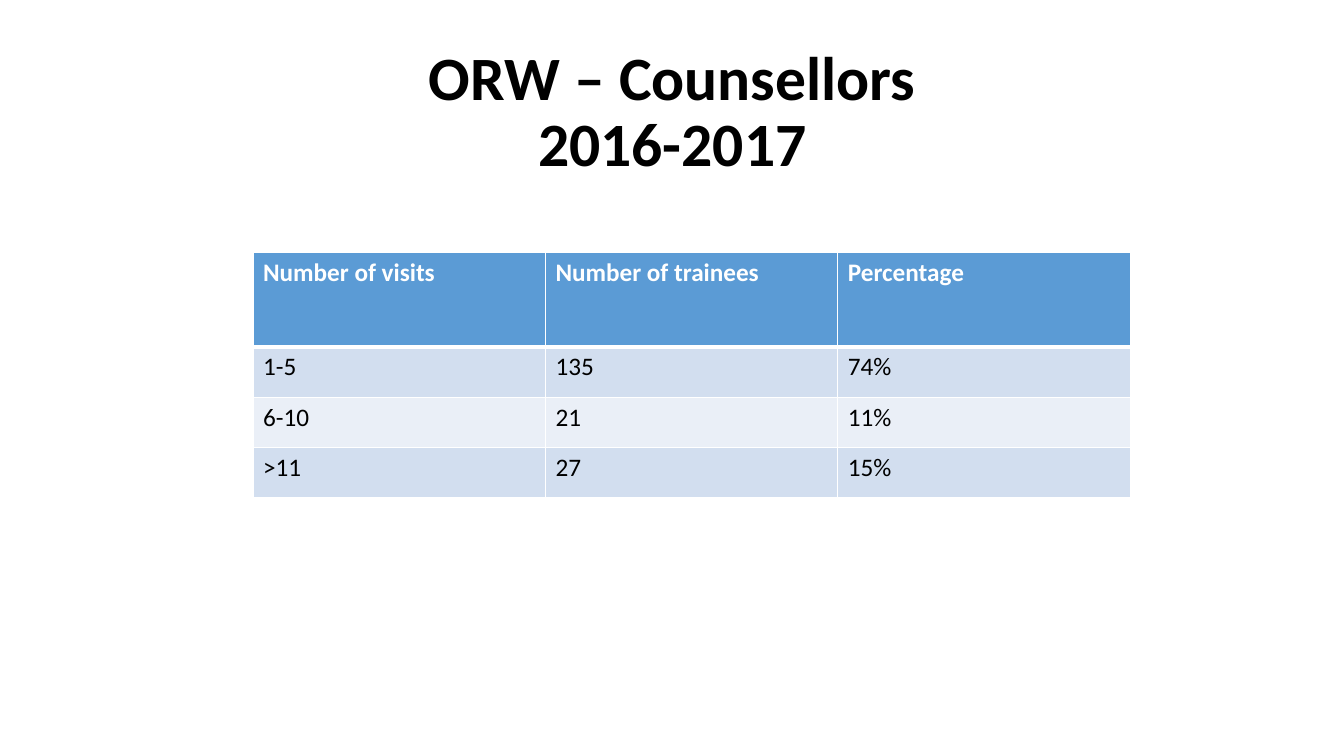
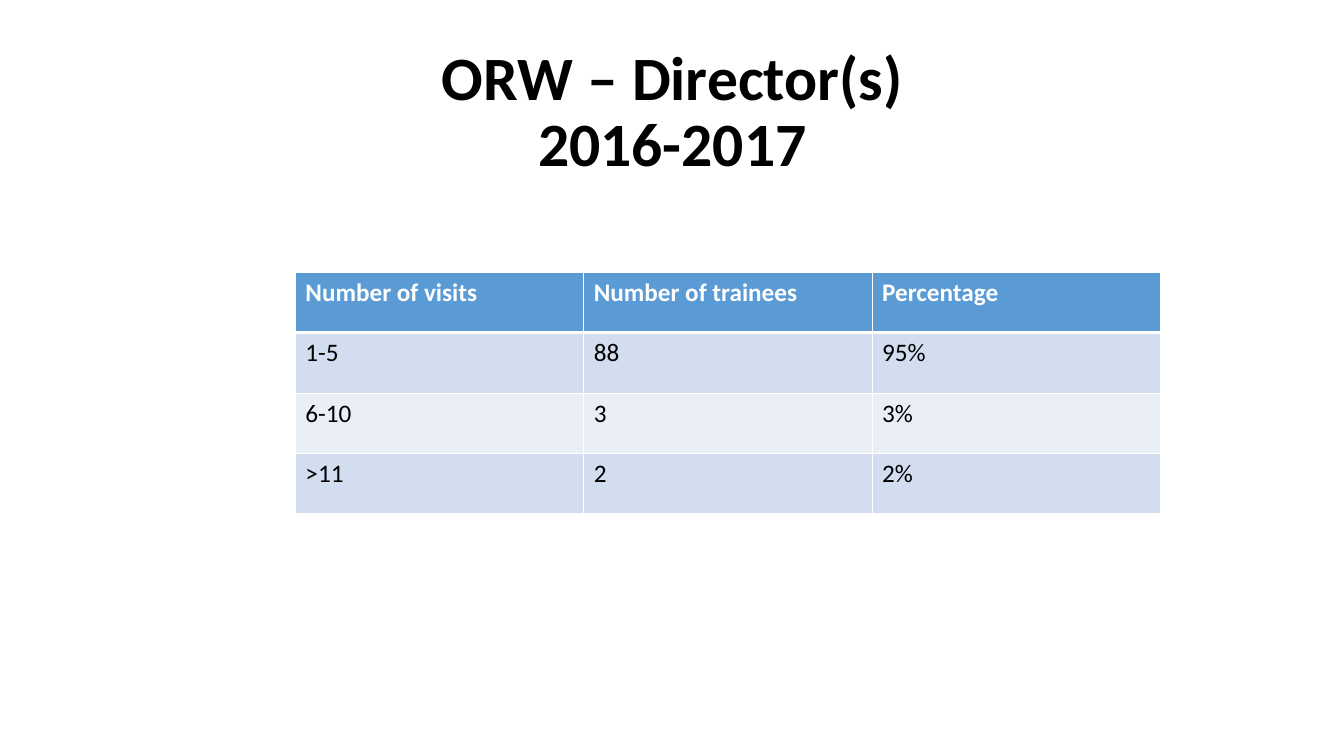
from lxml import etree
from pptx import Presentation
from pptx import util as u
from pptx.dml.color import RGBColor
from pptx.enum import text
from pptx.oxml.ns import qn

FONT = "Calibri"
BLACK, WHITE, HEADER = "000000", "FFFFFF", "5B9BD5"
BANDS = ["EAEFF7", "D2DEEF"]  # even rows, odd rows
HEADINGS = ["Number of visits", "Number of trainees", "Percentage"]

# title, table left and top, column width, header height, row height, body rows
SLIDES = [
    ("ORW – Counsellors\v2016-2017", 2.51, 2.5, 2.9, 0.94, 0.5,
     [("1-5", "135", "74%"), ("6-10", "21", "11%"), (">11", "27", "15%")]),
    ("ORW – Director(s)\v2016-2017", 2.93, 2.7, 2.86, 0.6, 0.6,
     [("1-5", "88", "95%"), ("6-10", "3", "3%"), (">11", "2", "2%")]),
]


def style(p, size, color, bold):
    for r in p.runs:
        r.font.name, r.font.size, r.font.bold = FONT, u.Pt(size), bold
        r.font.color.rgb = RGBColor.from_string(color)


def add_borders(cell, widths):
    """Draw white borders; widths maps the sides L, R, T, B to points."""
    for side, width in widths.items():
        ln = etree.SubElement(cell._tc.get_or_add_tcPr(), qn(f"a:ln{side}"), w=str(u.Pt(width)))
        fill = etree.SubElement(ln, qn("a:solidFill"))
        etree.SubElement(fill, qn("a:srgbClr"), val=WHITE)


prs = Presentation()
prs.slide_width, prs.slide_height = u.Inches(13.33), u.Inches(7.5)

for title, left, top, col_w, head_h, row_h, body in SLIDES:
    s = prs.slides.add_slide(prs.slide_layouts[6])

    tf = s.shapes.add_textbox(u.Inches(0.92), u.Inches(0.4), u.Inches(11.5), u.Inches(1.45)).text_frame
    tf.word_wrap = True
    tf.vertical_anchor = text.MSO_ANCHOR.MIDDLE
    tf.text = title
    p = tf.paragraphs[0]
    p.alignment, p.line_spacing = text.PP_ALIGN.CENTER, 0.9
    style(p, 44, BLACK, True)

    rows = [HEADINGS] + body
    heights = [head_h] + [row_h] * len(body)
    table = s.shapes.add_table(len(rows), len(HEADINGS), u.Inches(left), u.Inches(top),
                               u.Inches(col_w * len(HEADINGS)), u.Inches(sum(heights))).table
    for col in table.columns:
        col.width = u.Inches(col_w)
    for i, (values, height) in enumerate(zip(rows, heights)):
        table.rows[i].height = u.Inches(height)
        is_head = i == 0
        for j, value in enumerate(values):
            cell = table.cell(i, j)
            cell.text = value
            style(cell.text_frame.paragraphs[0], 18, WHITE if is_head else BLACK, is_head)
            add_borders(cell, {"L": 1, "R": 1, "T": 3 if i == 1 else 1, "B": 3 if is_head else 1})
            cell.fill.solid()
            cell.fill.fore_color.rgb = RGBColor.from_string(HEADER if is_head else BANDS[i % 2])

prs.save("out.pptx")
